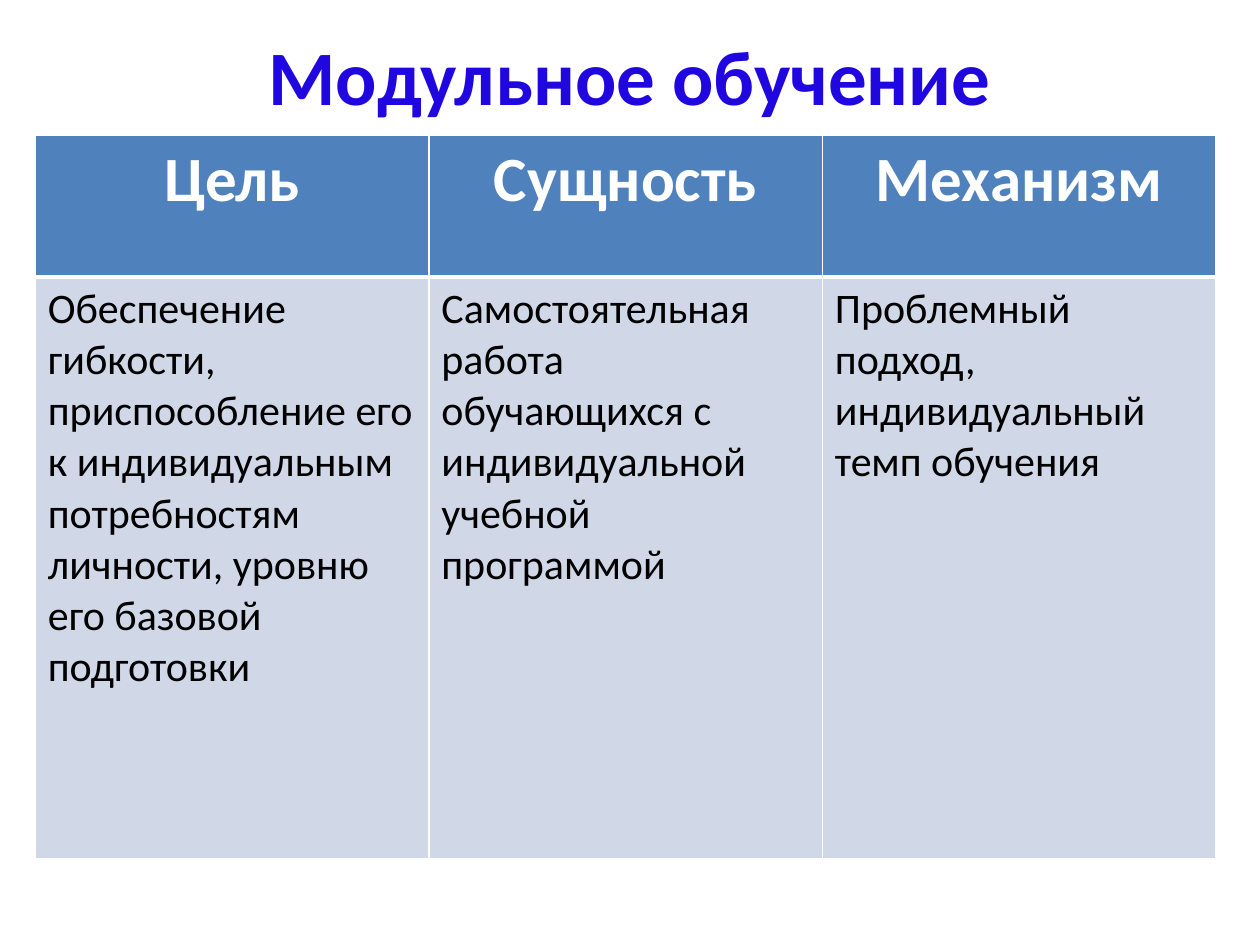
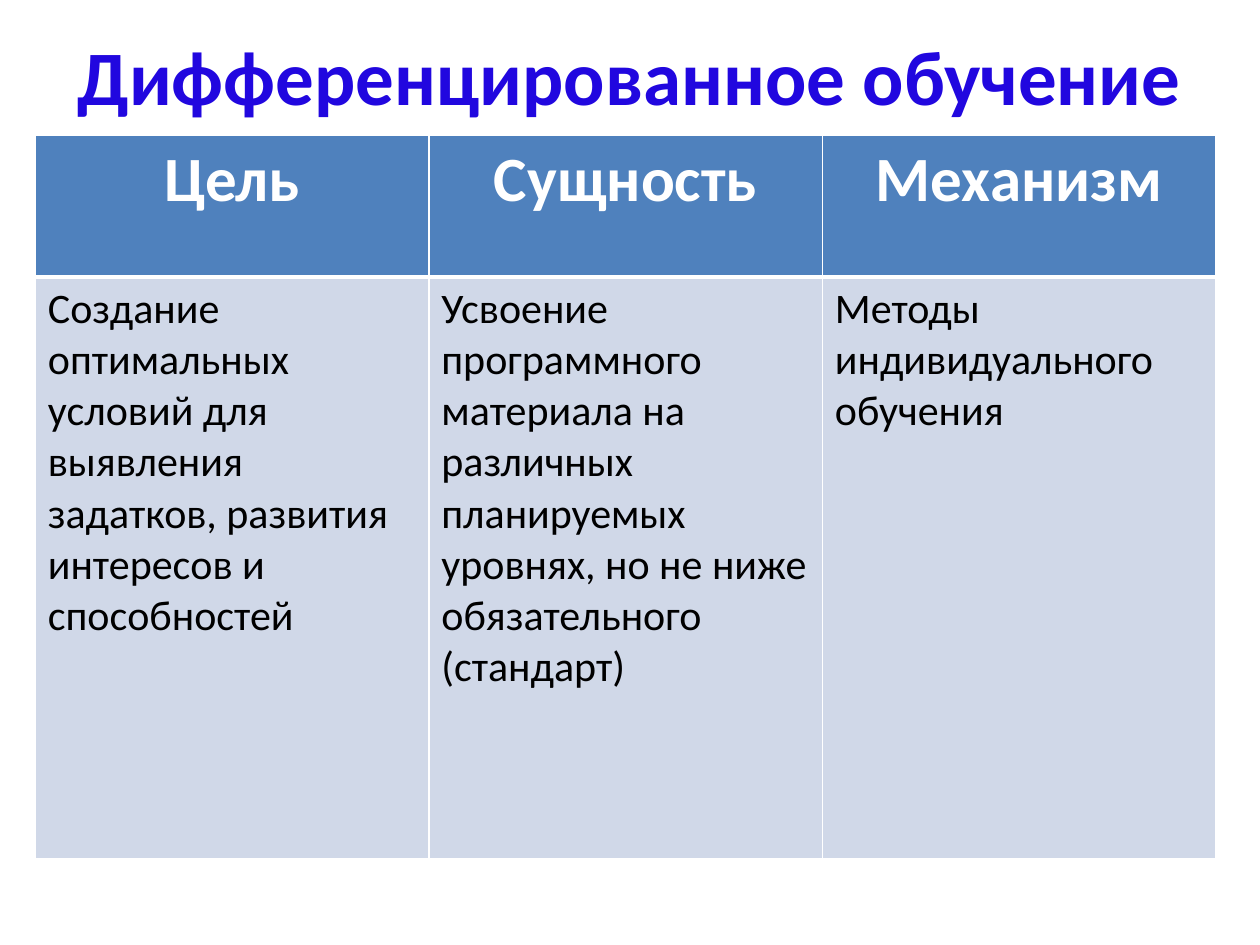
from lxml import etree
from pptx import Presentation
from pptx.dml.color import RGBColor
from pptx.enum.text import MSO_ANCHOR, PP_ALIGN
from pptx.oxml.ns import qn
from pptx.util import Inches, Pt

CENTER, LEFT = PP_ALIGN.CENTER, PP_ALIGN.LEFT
MIDDLE = MSO_ANCHOR.MIDDLE
WIDTH, HEIGHT = 10, 7.5
FONT = "Calibri"
COLORS = {"title": "2107DF", "head": "4F81BD", "body": "D0D8E8",
          "white": "FFFFFF", "black": "000000"}
THIN, THICK = 1, 3

HEADERS = ["Цель", "Сущность", "Механизм"]
SLIDES = {
    "Модульное обучение": [
        "Обеспечение гибкости, приспособление его к индивидуальным "
        "потребностям личности, уровню его базовой подготовки",
        "Самостоятельная работа обучающихся с индивидуальной учебной программой",
        "Проблемный подход, индивидуальный темп обучения",
    ],
    "Дифференцированное обучение": [
        "Создание оптимальных условий для выявления задатков, "
        "развития интересов и способностей",
        "Усвоение программного материала на различных планируемых уровнях, "
        "но не ниже обязательного (стандарт)",
        "Методы индивидуального обучения",
    ],
}


def write(tf, text, size, color, bold=False, align=LEFT):
    tf.word_wrap = True
    p = tf.paragraphs[0]
    p.alignment = align
    r = p.add_run()
    r.text = text
    r.font.name, r.font.size, r.font.bold = FONT, Pt(size), bold
    r.font.color.rgb = RGBColor.from_string(COLORS[color])


class Deck:
    TITLE = dict(size=44, color="title", bold=True, align=CENTER)
    HEAD = dict(size=36, color="white", bold=True, align=CENTER)
    BODY = dict(size=24, color="black")

    def __init__(self):
        self.prs = Presentation()
        self.prs.slide_width, self.prs.slide_height = Inches(WIDTH), Inches(HEIGHT)
        self.s = None

    def add_slide(self):
        self.s = self.prs.slides.add_slide(self.prs.slide_layouts[6])

    def box(self, left, top, width, height):
        return [Inches(v) for v in (left * WIDTH, top * HEIGHT,
                                    width * WIDTH, height * HEIGHT)]

    def title(self, text):
        sp = self.s.shapes.add_textbox(*self.box(0.05, 0.017, 0.9, 0.125))
        sp.text_frame.vertical_anchor = MIDDLE
        write(sp.text_frame, text, **self.TITLE)

    def borders(self, cell, top, bottom):
        tc_pr = cell._tc.get_or_add_tcPr()
        edges = {"a:lnL": THIN, "a:lnR": THIN, "a:lnT": top, "a:lnB": bottom}
        for i, (tag, width) in enumerate(edges.items()):
            line = etree.Element(qn(tag), w=str(Pt(width)))
            fill = etree.SubElement(line, qn("a:solidFill"))
            etree.SubElement(fill, qn("a:srgbClr"), val=COLORS["white"])
            tc_pr.insert(i, line)

    def cell(self, cell, text, fill, style, top, bottom):
        cell.fill.solid()
        cell.fill.fore_color.rgb = RGBColor.from_string(COLORS[fill])
        self.borders(cell, top, bottom)
        write(cell.text_frame, text, **style)

    def table(self, headers, texts):
        frame = self.s.shapes.add_table(2, len(headers),
                                        *self.box(0.028, 0.143, 0.937, 0.767))
        table = frame.table
        for row, share in zip(table.rows, (0.15, 0.616)):
            row.height = Inches(share * HEIGHT)
        for col, (head, text) in enumerate(zip(headers, texts)):
            self.cell(table.cell(0, col), head, "head", self.HEAD, THIN, THICK)
            self.cell(table.cell(1, col), text, "body", self.BODY, THICK, THIN)


def main():
    deck = Deck()
    for title, texts in SLIDES.items():
        deck.add_slide()
        deck.title(title)
        deck.table(HEADERS, texts)
    deck.prs.save("out.pptx")


if __name__ == "__main__":
    main()
